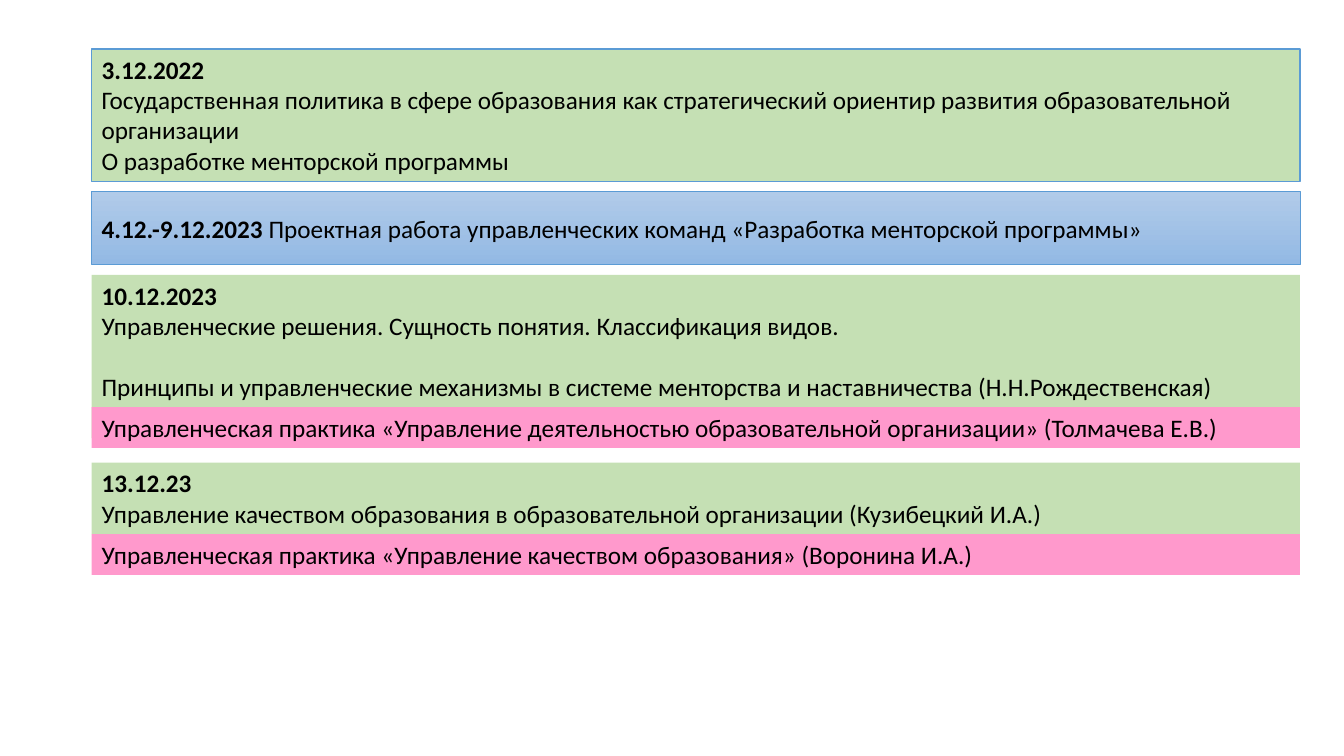
"""Builds the slide with the December training schedule."""
from dataclasses import dataclass

import pptx
import pptx.dml.color
import pptx.enum.shapes
import pptx.enum.text
import pptx.util

Cm = pptx.util.Cm
Pt = pptx.util.Pt


@dataclass(frozen=True)
class Theme:
    """Colours, type and the shared column of the schedule."""
    session: str = "C5E0B4"
    practice: str = "FF99CC"
    project: tuple = ("B1CBE9", "93B9E4")
    border: str = "5B9BD5"
    text: str = "000000"
    font: str = "Calibri"
    size: int = 18
    blank_line: int = 22
    left: float = 2.31
    width: float = 30.45


THEME = Theme()


def rgb(value):
    """Return a colour from its hexadecimal form."""
    return pptx.dml.color.RGBColor.from_string(value)


def add_block(slide, top, height, border_width=0):
    """Add a full-width block with an optional border."""
    block = slide.shapes.add_shape(
        pptx.enum.shapes.MSO_SHAPE.RECTANGLE,
        Cm(THEME.left), Cm(top), Cm(THEME.width), Cm(height))
    block.shadow.inherit = False
    if border_width:
        block.line.color.rgb = rgb(THEME.border)
        block.line.width = Pt(border_width)
    else:
        block.line.fill.background()
    block.text_frame.word_wrap = True
    block.text_frame.vertical_anchor = pptx.enum.text.MSO_ANCHOR.TOP
    return block


def fill_block(block, colour):
    """Give a block one flat colour."""
    block.fill.solid()
    block.fill.fore_color.rgb = rgb(colour)


def style_paragraph(paragraph):
    """Align a paragraph left and set the type of its runs."""
    paragraph.alignment = pptx.enum.text.PP_ALIGN.LEFT
    for run in paragraph.runs:
        run.font.name = THEME.font
        run.font.size = Pt(THEME.size)
        run.font.color.rgb = rgb(THEME.text)


def add_session(slide, top, height, date, topics, border_width=0):
    """Add a green session with a bold date above its topics."""
    session = add_block(slide, top, height, border_width)
    fill_block(session, THEME.session)
    session.text_frame.text = "\n".join([date, *topics])
    for paragraph in session.text_frame.paragraphs:
        style_paragraph(paragraph)
    session.text_frame.paragraphs[0].runs[0].font.bold = True
    return session


def add_practice(slide, top, title):
    """Add a pink strip for a management practice."""
    practice = add_block(slide, top, 1.03)
    fill_block(practice, THEME.practice)
    practice.text_frame.text = title
    style_paragraph(practice.text_frame.paragraphs[0])


def add_project(slide, top, height, dates, title):
    """Add the blue gradient block for team project work."""
    project = add_block(slide, top, height, 0.5)
    project.fill.gradient()
    project.fill.gradient_angle = 270
    for stop, colour in zip(project.fill.gradient_stops, THEME.project):
        stop.color.rgb = rgb(colour)
    project.text_frame.vertical_anchor = pptx.enum.text.MSO_ANCHOR.MIDDLE
    paragraph = project.text_frame.paragraphs[0]
    for words in (dates, title):
        paragraph.add_run().text = words
    style_paragraph(paragraph)
    paragraph.runs[0].font.bold = True


def main():
    """Build and save the schedule slide."""
    deck = pptx.Presentation()
    deck.slide_width, deck.slide_height = Cm(33.87), Cm(19.05)
    slide = deck.slides.add_slide(deck.slide_layouts[6])

    add_session(slide, 1.24, 3.33, "3.12.2022", [
        "Государственная политика в сфере образования как стратегический "
        "ориентир развития образовательной организации",
        "О разработке менторской программы"], border_width=1)
    add_project(slide, 4.83, 1.83, "4.12.-9.12.2023 ",
                "Проектная работа управленческих команд "
                "«Разработка менторской программы»")
    decisions = add_session(slide, 6.93, 4.11, "10.12.2023", [
        "Управленческие решения. Сущность понятия. Классификация видов.",
        "Принципы и управленческие механизмы в системе менторства "
        "и наставничества (Н.Н.Рождественская)"])
    decisions.text_frame.paragraphs[-1].space_before = Pt(THEME.blank_line)
    add_practice(slide, 10.26,
                 "Управленческая практика «Управление деятельностью "
                 "образовательной организации» (Толмачева Е.В.)")
    add_session(slide, 11.66, 1.8, "13.12.23", [
        "Управление качеством образования в образовательной организации "
        "(Кузибецкий И.А.)"])
    add_practice(slide, 13.46,
                 "Управленческая практика «Управление качеством "
                 "образования» (Воронина И.А.)")
    deck.save("out.pptx")


if __name__ == "__main__":
    main()
